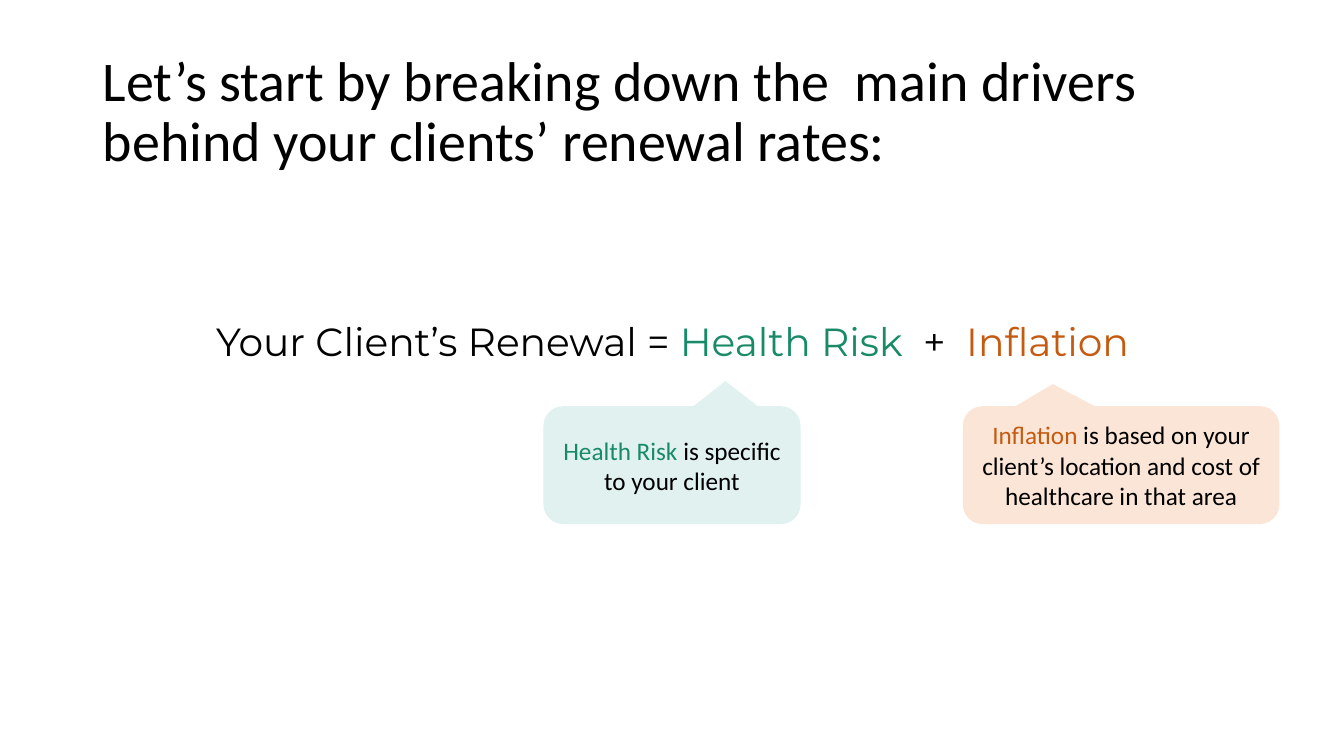
import pptx
import pptx.util
import pptx.dml.color
import pptx.enum.shapes
import pptx.enum.text
from lxml import etree

Inches, Pt = pptx.util.Inches, pptx.util.Pt
ALIGN = pptx.enum.text.PP_ALIGN
ANCHOR = pptx.enum.text.MSO_ANCHOR
BLACK, GREEN, ORANGE = "000000", "188A68", "C55A11"


def rgb(hex_color):
    return pptx.dml.color.RGBColor.from_string(hex_color)


def add_runs(p, pieces, font, size):
    """Append (text, colour) pieces to a paragraph in one font and size."""
    for text, color in pieces:
        r = p.add_run()
        r.text = text
        r.font.name = font
        r.font.size = Pt(size)
        r.font.color.rgb = rgb(color)


prs = pptx.Presentation()
prs.slide_width, prs.slide_height = Inches(13.33), Inches(7.5)
s = prs.slides.add_slide(prs.slide_layouts[1])
title, body = s.placeholders

# Title and renewal formula share the same left edge and width
margin, content_width = Inches(0.92), Inches(11.5)
for sp, top, height in ((title, 0.4, 1.45), (body, 3.1, 0.86)):
    sp.left, sp.top = margin, Inches(top)
    sp.width, sp.height = content_width, Inches(height)
    sp.text_frame.auto_size = pptx.enum.text.MSO_AUTO_SIZE.NONE

title.text_frame.vertical_anchor = ANCHOR.MIDDLE
p = title.text_frame.paragraphs[0]
p.alignment = ALIGN.LEFT
p.line_spacing = 0.9
add_runs(p, [("Let’s start by breaking down the  main drivers behind your clients’ renewal rates:", BLACK)],
         "Calibri", 40)

p = body.text_frame.paragraphs[0]
p.alignment = ALIGN.CENTER
p.space_before = Pt(10)
add_runs(p, [("Your Client’s Renewal = ", BLACK), ("Health Risk  ", GREEN),
             ("+  ", BLACK), ("Inflation", ORANGE)], "Montserrat", 28)
pPr = p._p.get_or_add_pPr()
pPr.set("marL", "0")
pPr.set("indent", "0")
etree.SubElement(pPr, pptx.oxml.ns.qn("a:buNone"))

# Callouts pointing up at the two terms: left, width, pointer, fill, text
callouts = [
    (5.39, 2.55, (0.208, -0.713), "E0F1F0",
     [("Health Risk ", GREEN), ("is specific to your client", BLACK)]),
    (9.55, 3.14, (-0.216, -0.687), "FBE5D6",
     [("Inflation", ORANGE),
      (" is based on your client’s location and cost of healthcare in that area", BLACK)]),
]
for left, width, pointer, fill, pieces in callouts:
    sp = s.shapes.add_shape(pptx.enum.shapes.MSO_SHAPE.ROUNDED_RECTANGULAR_CALLOUT,
                            Inches(left), Inches(4.03), Inches(width), Inches(1.17))
    sp.adjustments[0], sp.adjustments[1] = pointer
    sp.shadow.inherit = False
    sp.fill.solid()
    sp.fill.fore_color.rgb = rgb(fill)
    sp.line.fill.background()
    tf = sp.text_frame
    tf.word_wrap = True
    tf.vertical_anchor = ANCHOR.MIDDLE
    p = tf.paragraphs[0]
    p.alignment = ALIGN.CENTER
    add_runs(p, pieces, "Calibri", 18)

prs.save("out.pptx")
